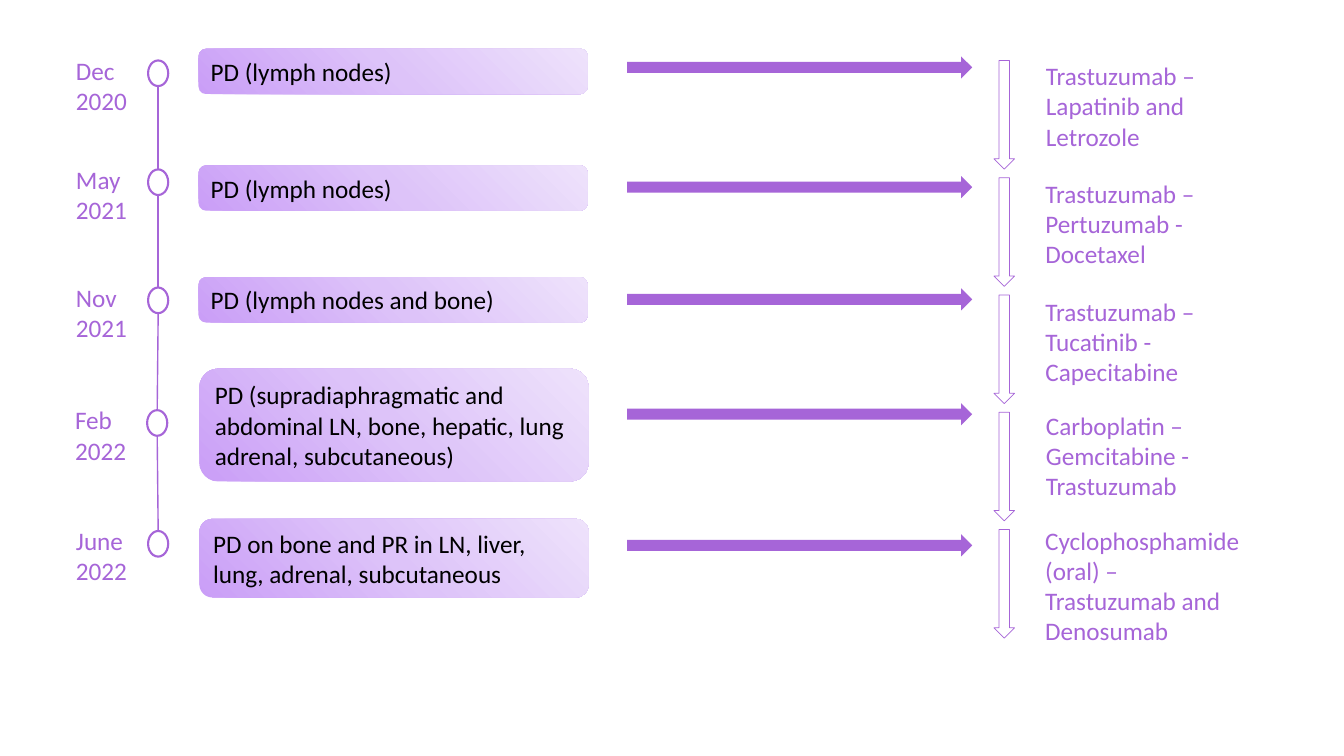
from copy import deepcopy
from dataclasses import dataclass

from lxml import etree
from pptx import Presentation
from pptx import util as u
from pptx.dml.color import RGBColor
from pptx.enum import shapes, text
from pptx.oxml import ns

PURPLE = RGBColor(0xA6, 0x65, 0xD8)
BLACK = RGBColor(0, 0, 0)
GRADIENT = [
    (0.0, RGBColor(0xCA, 0x9E, 0xF7)),
    (0.5, RGBColor(0xDD, 0xC3, 0xF9)),
    (1.0, RGBColor(0xEE, 0xE2, 0xFB)),
]
FONT, TEXT_SIZE = "Calibri", 18
MARKER_WIDTH, MARKER_HEIGHT = 14.4, 18.3
THERAPY_ARROW_TOP, THERAPY_ARROW_STEP = 43.2, 83.75


@dataclass(frozen=True)
class Box:
    left: float
    top: float
    width: float
    height: float


@dataclass(frozen=True)
class Event:
    date: str
    finding: str
    therapy: str
    marker_left: float
    marker_top: float
    finding_box: Box
    arrow_top: float
    therapy_box: Box


EVENTS = [
    Event("Dec 2020", "PD (lymph nodes)",
          "Trastuzumab – Lapatinib and Letrozole", 105.8, 43.2,
          Box(141.8, 34.8, 278, 32.4), 40.3, Box(740, 39.6, 132.5, 72.7)),
    Event("May 2021", "PD (lymph nodes)",
          "Trastuzumab – Pertuzumab - Docetaxel", 105.8, 121,
          Box(141.8, 118.1, 278, 32.4), 125.8, Box(739.7, 123.8, 132.5, 72.7)),
    Event("Nov 2021", "PD (lymph nodes and bone)",
          "Trastuzumab – Tucatinib - Capecitabine", 105.8, 205.4,
          Box(141.8, 198, 278, 32.4), 205.9, Box(739.7, 208.1, 132.5, 72.7)),
    Event("Feb 2022",
          "PD (supradiaphragmatic and abdominal LN, bone, hepatic, lung "
          "adrenal, subcutaneous)",
          "Carboplatin – Gemcitabine - Trastuzumab", 105.1, 293,
          Box(142.4, 263.3, 278, 80.6), 288, Box(740, 289.4, 184.3, 72.7)),
    Event("June 2022",
          "PD on bone and PR in LN, liver, lung, adrenal, subcutaneous",
          "Cyclophosphamide (oral) – Trastuzumab and Denosumab", 105.8, 379.3,
          Box(142.4, 370.6, 278, 56.2), 381.6, Box(739.5, 371.5, 160.6, 94.3)),
]


def in_points(box: Box) -> tuple:
    return u.Pt(box.left), u.Pt(box.top), u.Pt(box.width), u.Pt(box.height)


def write(shape, words: str, color: RGBColor) -> None:
    frame = shape.text_frame
    frame.text = words
    frame.word_wrap = True
    frame.auto_size = text.MSO_AUTO_SIZE.SHAPE_TO_FIT_TEXT
    paragraph = frame.paragraphs[0]
    paragraph.alignment = text.PP_ALIGN.LEFT
    font = paragraph.runs[0].font
    font.name, font.size = FONT, u.Pt(TEXT_SIZE)
    font.color.rgb = color


def add_label(slide, box: Box, words: str) -> None:
    write(slide.shapes.add_textbox(*in_points(box)), words, PURPLE)


def add_plain_shape(slide, kind, box: Box):
    """Add a preset shape with no shadow, fill or line."""
    shape = slide.shapes.add_shape(kind, *in_points(box))
    shape.shadow.inherit = False
    shape.fill.background()
    shape.line.fill.background()
    return shape


def add_outline(slide, kind, box: Box, line_width: float):
    shape = add_plain_shape(slide, kind, box)
    shape.line.color.rgb = PURPLE
    shape.line.width = u.Pt(line_width)
    return shape


def add_finding(slide, box: Box, words: str) -> None:
    shape = add_plain_shape(slide, shapes.MSO_SHAPE.ROUNDED_RECTANGLE, box)
    shape.fill.gradient()
    shape.fill.gradient_angle = 45
    stop_list = shape._element.spPr.find(ns.qn("a:gradFill")).find(ns.qn("a:gsLst"))
    stop_list.append(deepcopy(stop_list[0]))
    for stop, (position, color) in zip(shape.fill.gradient_stops, GRADIENT):
        stop.position = position
        stop.color.rgb = color
    write(shape, words, BLACK)
    shape.text_frame.vertical_anchor = text.MSO_ANCHOR.MIDDLE


def join_markers(slide, upper, lower) -> None:
    """Draw the timeline from the bottom of one marker to the top of the next."""
    line = slide.shapes.add_connector(
        shapes.MSO_CONNECTOR.STRAIGHT,
        upper.left + upper.width // 2, upper.top + upper.height,
        lower.left + lower.width // 2, lower.top)
    line.end_connect(lower, 0)
    line.line.color.rgb = PURPLE
    line.line.width = u.Pt(1)
    etree.SubElement(line._element.spPr, ns.qn("a:effectLst"))


def add_event(slide, index: int, event: Event):
    """Draw one row of the timeline and return its marker."""
    add_label(slide, Box(event.marker_left - 58.6, event.marker_top - 7.5, 65.5, 50.9),
              event.date)
    marker = add_outline(
        slide, shapes.MSO_SHAPE.FLOWCHART_CONNECTOR,
        Box(event.marker_left, event.marker_top, MARKER_WIDTH, MARKER_HEIGHT), 1.5)
    add_finding(slide, event.finding_box, event.finding)
    arrow = add_plain_shape(slide, shapes.MSO_SHAPE.RIGHT_ARROW,
                            Box(448, event.arrow_top, 246.5, 15.8))
    arrow.fill.solid()
    arrow.fill.fore_color.rgb = PURPLE
    therapy_arrow_top = THERAPY_ARROW_TOP + index * THERAPY_ARROW_STEP
    add_outline(slide, shapes.MSO_SHAPE.DOWN_ARROW,
                Box(710, therapy_arrow_top, 14.7, 77.6), 0.5)
    add_label(slide, event.therapy_box, event.therapy)
    return marker


def main() -> None:
    presentation = Presentation()
    presentation.slide_width, presentation.slide_height = u.Pt(960), u.Pt(540)
    slide = presentation.slides.add_slide(presentation.slide_layouts[6])
    markers = [add_event(slide, index, event) for index, event in enumerate(EVENTS)]
    for upper, lower in zip(markers, markers[1:]):
        join_markers(slide, upper, lower)
    presentation.save("out.pptx")


if __name__ == "__main__":
    main()
